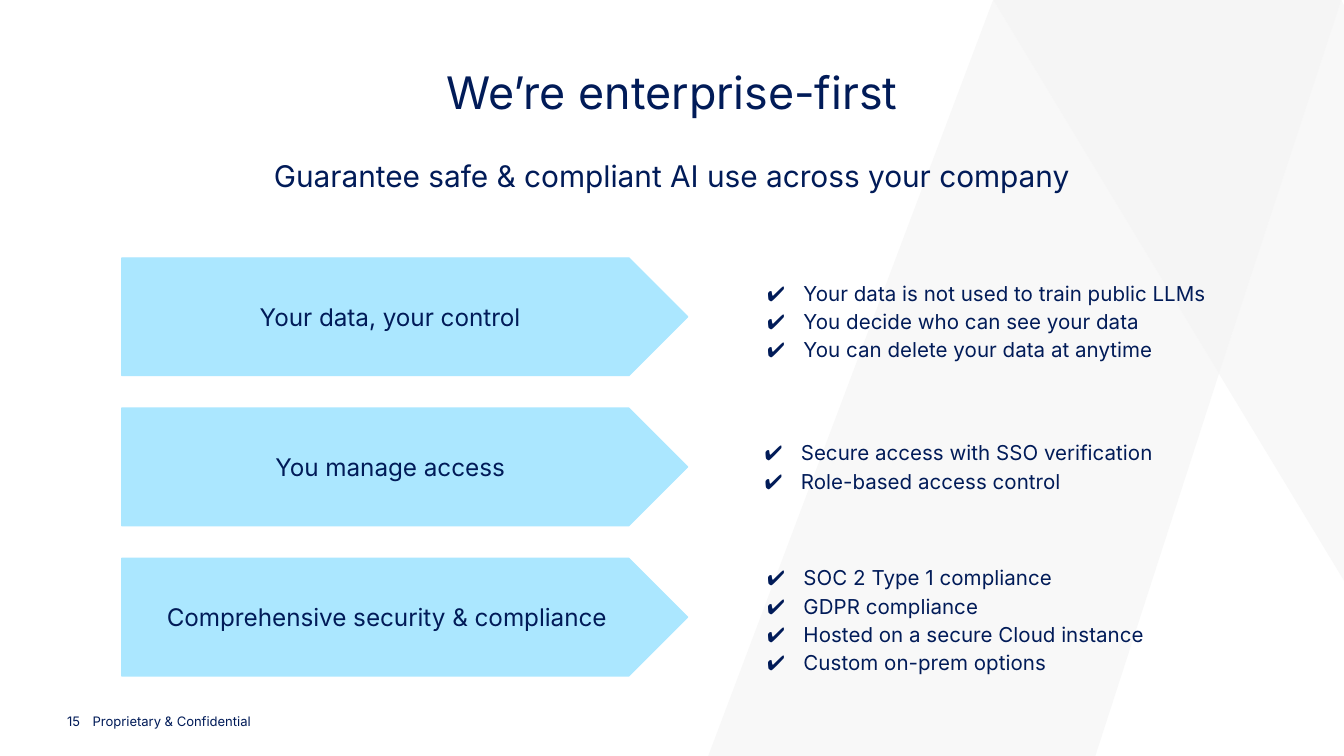
from dataclasses import dataclass

from pptx import Presentation
from pptx.dml.color import RGBColor as RGB
from pptx.enum.shapes import MSO_SHAPE as Shape
from pptx.enum.text import MSO_ANCHOR as Anchor, MSO_AUTO_SIZE as AutoSize, PP_ALIGN as Align
from pptx.util import Emu, Inches, Pt

WIDTH = Inches(10)
HEIGHT = Emu(WIDTH * 9 // 16)


@dataclass(frozen=True)
class Theme:
    font: str = "Inter"
    ink: RGB = RGB(0x01, 0x1B, 0x58)
    arrow: RGB = RGB(0xAB, 0xE7, 0xFF)
    band: RGB = RGB(0xF8, 0xF8, 0xF8)
    overlap: RGB = RGB(0xF5, 0xF5, 0xF5)
    title: int = 24
    subtitle: int = 16
    label: int = 13
    item: int = 11
    footer: int = 7


@dataclass(frozen=True)
class Box:
    left: float
    top: float
    width: float
    height: float

    def emu(self) -> tuple:
        return (across(self.left), down(self.top), across(self.width), down(self.height))


@dataclass(frozen=True)
class Pillar:
    label: str
    items: tuple
    box: Box


@dataclass(frozen=True)
class Facet:
    points: tuple
    fill: RGB


THEME = Theme()
ARROW = Box(9.06, 34.13, 42.1, 15.55)
ARROW_PITCH = 19.87

PILLARS = (
    Pillar(
        "Your data, your control",
        (
            "Your data is not used to train public LLMs",
            "You decide who can see your data",
            "You can delete your data at anytime",
        ),
        Box(56.1, 34.88, 36.2, 14.04),
    ),
    Pillar(
        "You manage access",
        ("Secure access with SSO verification", "Role-based access control"),
        Box(55.9, 56, 36.2, 10.31),
    ),
    Pillar(
        "Comprehensive security & compliance ",
        (
            "SOC 2 Type 1 compliance",
            "GDPR compliance",
            "Hosted on a secure Cloud instance",
            "Custom on-prem options",
        ),
        Box(56.1, 72.53, 36.2, 17.42),
    ),
)

TOP_LEFT, TOP_RIGHT, CROSSING = (73.9, 0), (99.8, 0), (90.7, 49.42)
FACETS = (
    Facet((TOP_RIGHT, CROSSING, (100, 76.8), (100, 0.71)), THEME.band),
    Facet((TOP_LEFT, (52.7, 100), (81.5, 100), CROSSING), THEME.band),
    Facet((TOP_LEFT, CROSSING, TOP_RIGHT), THEME.overlap),
)


def across(share: float) -> Emu:
    return Emu(round(WIDTH * share / 100))


def down(share: float) -> Emu:
    return Emu(round(HEIGHT * share / 100))


def format_text(tf, size: int, align=Align.LEFT, anchor=Anchor.TOP, inset=0.0, spacing=1.0) -> None:
    tf.word_wrap = True
    tf.auto_size = AutoSize.NONE
    tf.vertical_anchor = anchor
    tf.margin_left = tf.margin_right = tf.margin_top = tf.margin_bottom = Inches(inset)
    for p in tf.paragraphs:
        p.alignment = align
        p.line_spacing = spacing
        for r in p.runs:
            r.font.name = THEME.font
            r.font.size = Pt(size)
            r.font.color.rgb = THEME.ink


def add_text(s, box: Box, text: str, size: int, **style) -> None:
    tf = s.shapes.add_textbox(*box.emu()).text_frame
    tf.text = text
    format_text(tf, size, **style)


def add_title(s, box: Box, text: str) -> None:
    sp = s.shapes.title
    sp.left, sp.top, sp.width, sp.height = box.emu()
    sp.text_frame.text = text
    format_text(sp.text_frame, THEME.title, align=Align.CENTER, spacing=0.9)
    s.shapes.element.append(sp.element)


def add_facet(s, facet: Facet) -> None:
    start, *rest = [(across(x), down(y)) for x, y in facet.points]
    builder = s.shapes.build_freeform(*start)
    builder.add_line_segments(rest, close=True)
    sp = builder.convert_to_shape()
    sp.shadow.inherit = False
    sp.fill.solid()
    sp.fill.fore_color.rgb = facet.fill
    sp.line.fill.background()


def add_arrow(s, box: Box, label: str) -> None:
    sp = s.shapes.add_shape(Shape.PENTAGON, *box.emu())
    sp.shadow.inherit = False
    sp.fill.solid()
    sp.fill.fore_color.rgb = sp.line.color.rgb = THEME.arrow
    sp.line.width = Pt(0.75)
    sp.text_frame.text = label
    format_text(sp.text_frame, THEME.label, Align.CENTER, Anchor.MIDDLE, inset=0.1)


def add_checklist(s, box: Box, items: tuple) -> None:
    tf = s.shapes.add_textbox(*box.emu()).text_frame
    tf.text = "\n".join(f"✔\t{item}" for item in items)
    indent = Inches(0.27)
    for p in tf.paragraphs:
        pPr = p._p.get_or_add_pPr()
        pPr.set("marL", str(indent))
        pPr.set("indent", str(-indent))
    format_text(tf, THEME.item, inset=0.1, spacing=1.15)


def main() -> None:
    prs = Presentation()
    prs.slide_width, prs.slide_height = WIDTH, HEIGHT
    s = prs.slides.add_slide(prs.slide_layouts[5])
    for facet in FACETS:
        add_facet(s, facet)
    add_title(s, Box(5, 9.42, 90, 7.64), "We’re enterprise-first")
    add_text(
        s,
        Box(5, 21.4, 90, 6.4),
        "Guarantee safe & compliant AI use across your company",
        THEME.subtitle,
        align=Align.CENTER,
        spacing=0.9,
    )
    for row, pillar in enumerate(PILLARS):
        top = ARROW.top + row * ARROW_PITCH
        add_arrow(s, Box(ARROW.left, top, ARROW.width, ARROW.height), pillar.label)
        add_checklist(s, pillar.box, pillar.items)
    add_text(s, Box(5, 94.4, 1.9, 2.13), "15", THEME.footer, anchor=Anchor.MIDDLE)
    add_text(s, Box(6.9, 94.4, 26.4, 2.13), "Proprietary & Confidential", THEME.footer)
    prs.save("out.pptx")


if __name__ == "__main__":
    main()
